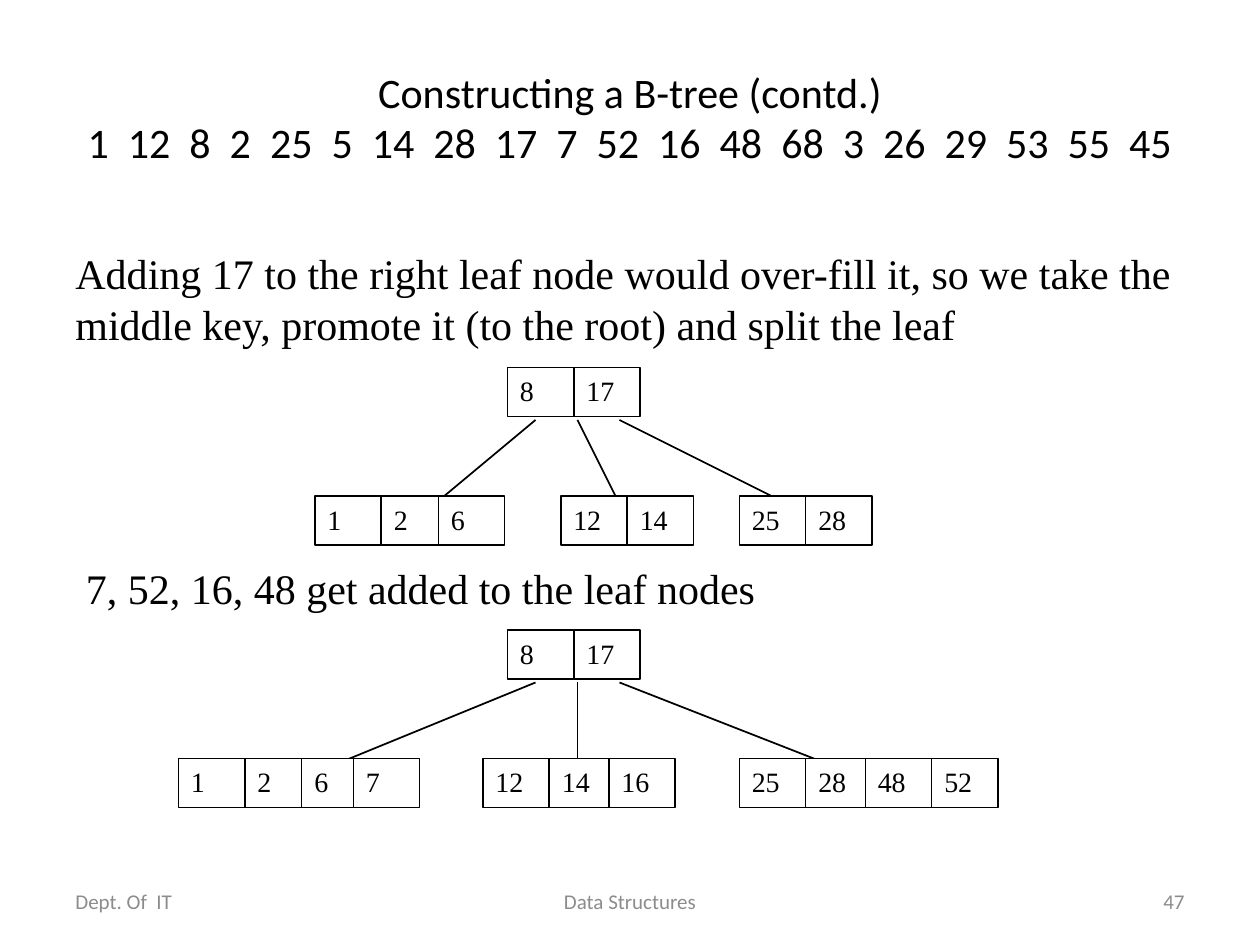
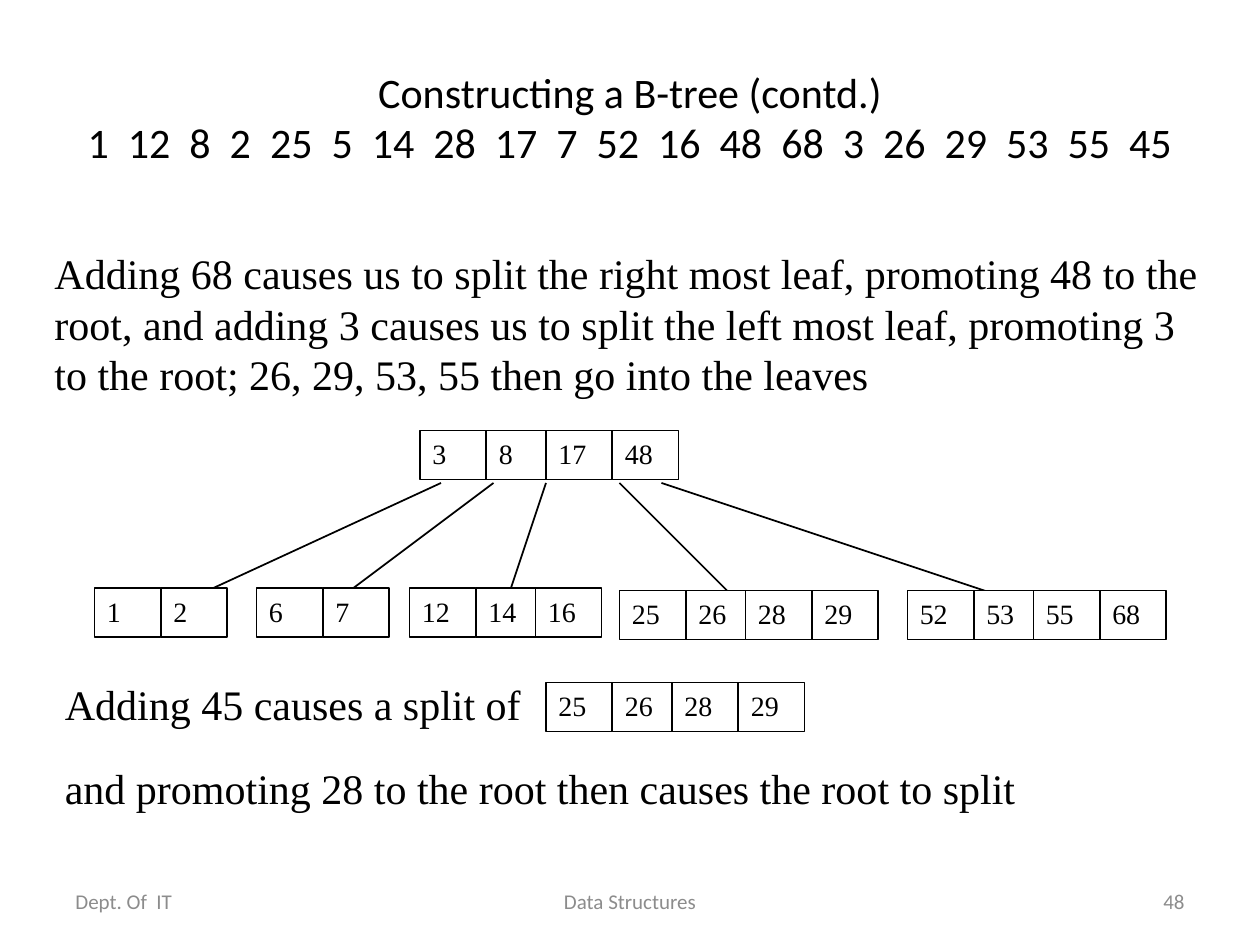
import pptx
import pptx.dml.color
import pptx.enum.shapes
import pptx.enum.text
import pptx.util
from pptx.oxml.ns import qn
import lxml.etree

Pt = pptx.util.Pt
ALIGN = pptx.enum.text.PP_ALIGN
ANCHOR = pptx.enum.text.MSO_ANCHOR

# Shared style
BLACK, WHITE, GREY = "000000", "FFFFFF", "8C8C8C"
SANS, SERIF = "Calibri", "Times New Roman"
TITLE = ("Constructing a B-tree (contd.)\v"
         "1  12  8  2  25  5  14  28  17  7  52  16  48  68  3  26  29  53  55  45")

# Key cells: size, and the left edge of each key within its node
CELL_WIDTH, CELL_HEIGHT = 37.8, 28
KEY_STEPS = (0, 38, 72, 110)
TIGHT_STEPS = (0, 38, 70.5, 100)
LINK_DROP = 30  # from the top of the root to the start of its links


def colour(value):
    return pptx.dml.color.RGBColor.from_string(value)


def write(shape, text, size, font, ink=BLACK, align=ALIGN.LEFT, anchor=ANCHOR.TOP):
    frame = shape.text_frame
    frame.word_wrap = True
    frame.vertical_anchor = anchor
    frame.text = text
    para = frame.paragraphs[0]
    para.alignment = align
    for span in para.runs:
        span.font.size = Pt(size)
        span.font.name = font
        span.font.color.rgb = colour(ink)


def add_text(page, box, text, size=24, font=SERIF, **style):
    shape = page.shapes.add_textbox(*map(Pt, box))
    write(shape, text, size, font, **style)


def add_node(page, left, top, keys, steps=KEY_STEPS):
    """A row of key cells whose top left corner is at left, top."""
    for key, step in zip(keys, steps):
        cell = page.shapes.add_shape(
            pptx.enum.shapes.MSO_SHAPE.RECTANGLE,
            Pt(left + step), Pt(top), Pt(CELL_WIDTH), Pt(CELL_HEIGHT))
        cell.shadow.inherit = False
        cell.fill.solid()
        cell.fill.fore_color.rgb = colour(WHITE)
        cell.line.color.rgb = colour(BLACK)
        cell.line.width = Pt(0.75)
        write(cell, str(key), 16, SERIF)


def add_link(page, start, end):
    link = page.shapes.add_connector(
        pptx.enum.shapes.MSO_CONNECTOR.STRAIGHT, *map(Pt, start + end))
    link.line.color.rgb = colour(BLACK)
    link.line.width = Pt(1)
    lxml.etree.SubElement(link._element.spPr, qn("a:effectLst"))


def add_tree(page, corner, root, leaves, links):
    """root: (x, keys); leaves: (x, y, keys[, steps]); links: (x from, x to, height)."""
    left, top = corner
    # Links go behind the nodes, which cover their ends
    for start_x, end_x, height in links:
        start_y = top + LINK_DROP
        add_link(page, (left + start_x, start_y), (left + end_x, start_y + height))
    root_x, root_keys = root
    add_node(page, left + root_x, top, root_keys)
    for x, y, *node in leaves:
        add_node(page, left + x, top + y, *node)


def add_page(deck, number):
    """A page with the common title and footers."""
    page = deck.slides.add_slide(deck.slide_layouts[6])
    add_text(page, (36, 21.6, 648, 90), TITLE, font=SANS,
             align=ALIGN.CENTER, anchor=ANCHOR.MIDDLE)
    footers = ((36, 168, "Dept. Of  IT", ALIGN.LEFT),
               (246, 228, "Data Structures", ALIGN.CENTER),
               (516, 168, str(number), ALIGN.RIGHT))
    for left, width, text, align in footers:
        add_text(page, (left, 500.5, width, 28.75), text, 12, SANS,
                 ink=GREY, align=align, anchor=ANCHOR.MIDDLE)
    return page


def build_leaf_split(deck):
    page = add_page(deck, 47)
    # Promoting 17
    add_text(page, (36, 138, 660, 65),
             "Adding 17 to the right leaf node would over-fill it, so we take the "
             "middle key, promote it (to the root) and split the leaf")
    add_tree(page, (180, 210), (110, (8, 17)),
             leaves=((0, 73.5, (1, 2, 6), TIGHT_STEPS),
                     (140.5, 73.5, (12, 14)),
                     (242.5, 73.5, (25, 28))),
             links=((126, 54, 60), (150, 180, 60), (174, 282, 54)))
    # Filling the leaves
    add_text(page, (42, 318, 648, 36), "7, 52, 16, 48 get added to the leaf nodes")
    add_tree(page, (102, 360), (188, (8, 17)),
             leaves=((0, 73.5, (1, 2, 6, 7), TIGHT_STEPS),
                     (174, 73.5, (12, 14, 16)),
                     (320.5, 73.5, (25, 28, 48, 52))),
             links=((204, 72, 54), (228, 228, 60), (252, 390, 54)))


def build_root_split(deck):
    page = add_page(deck, 48)
    # Promoting 48 and 3
    add_text(page, (24, 138, 672, 94),
             "Adding 68 causes us to split the right most leaf, promoting 48 to the "
             "root, and adding 3 causes us to split the left most leaf, promoting 3 "
             "to the root; 26, 29, 53, 55 then go into the leaves")
    add_tree(page, (54, 246), (186, (3, 8, 17, 48)),
             leaves=((0, 90, (1, 2)),
                     (92.5, 90, (6, 7)),
                     (180, 90, (12, 14, 16)),
                     (300, 91.5, (25, 26, 28, 29)),
                     (464.5, 91.5, (52, 53, 55, 68))),
             links=((198, 42, 72), (228, 132, 72), (258, 234, 72),
                    (300, 372, 72), (324, 540, 72)))
    # Splitting the root
    add_text(page, (30, 384, 288, 36), "Adding 45 causes a split of")
    add_node(page, 312, 390, (25, 26, 28, 29))
    add_text(page, (30, 432, 654, 36),
             "and promoting 28 to the root then causes the root to split")


def main():
    deck = pptx.Presentation()
    deck.slide_width, deck.slide_height = Pt(720), Pt(540)
    build_leaf_split(deck)
    build_root_split(deck)
    deck.save("out.pptx")


if __name__ == "__main__":
    main()
